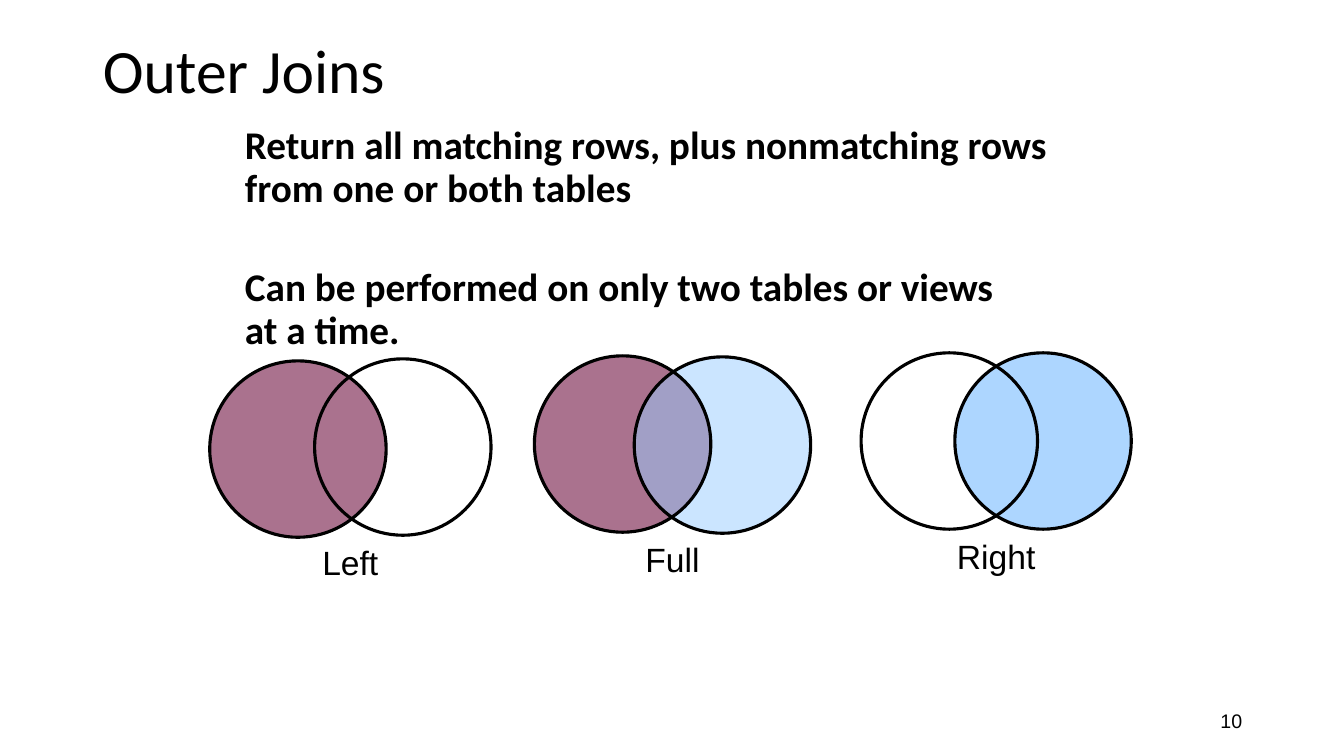
from lxml import etree
from pptx import Presentation
from pptx.dml.color import RGBColor
from pptx.enum.shapes import MSO_SHAPE
from pptx.enum.text import MSO_ANCHOR, MSO_AUTO_SIZE, PP_ALIGN
from pptx.oxml.ns import qn
from pptx.util import Inches, Pt

OVAL = MSO_SHAPE.OVAL
MIDDLE = MSO_ANCHOR.MIDDLE
LEFT, CENTER, RIGHT = PP_ALIGN.LEFT, PP_ALIGN.CENTER, PP_ALIGN.RIGHT
FIT_SHAPE = MSO_AUTO_SIZE.SHAPE_TO_FIT_TEXT

BLACK = RGBColor(0x00, 0x00, 0x00)
PLUM = RGBColor(0x95, 0x4F, 0x72)
SKY = RGBColor(0x99, 0xCC, 0xFF)

TITLE = "Outer Joins"
PAGE_NUMBER = "10"
STATEMENTS = [
    (5, ["Return all matching rows, plus nonmatching rows", "from one or both tables"]),
    (41, ["Can be performed on only two tables or views", "at a time."]),
]
# label, label width, circles from back to front: (left, top, fill, opacity %, outlined)
JOINS = [
    ("Left", 0.56, [(2.08, 3.58, PLUM, 80, False),
                    (3.12, 3.56, None, 0, True),
                    (2.08, 3.58, None, 0, True)]),
    ("Full", 0.54, [(5.3, 3.54, PLUM, 80, False),
                    (6.29, 3.54, SKY, 50, True),
                    (5.3, 3.53, None, 0, True)]),
    ("Right", 0.79, [(9.47, 3.5, SKY, 80, True),
                     (8.54, 3.5, None, 0, True)]),
]
DIAMETER = 1.75
LABEL_DROP = 1.82
LABEL_HEIGHT = 0.4


def add_run(paragraph, text, size, font, bold=False):
    run = paragraph.add_run()
    run.text = text
    run.font.size = Pt(size)
    run.font.name = font
    run.font.bold = bold
    run.font.color.rgb = BLACK


def add_frame(slide, left, top, width, height):
    frame = slide.shapes.add_textbox(
        Inches(left), Inches(top), Inches(width), Inches(height)).text_frame
    frame.word_wrap = True
    return frame


def add_circle(slide, left, top, fill, opacity, outlined):
    circle = slide.shapes.add_shape(
        OVAL, Inches(left), Inches(top), Inches(DIAMETER), Inches(DIAMETER))
    circle.shadow.inherit = False
    if fill is None:
        circle.fill.background()
    else:
        circle.fill.solid()
        circle.fill.fore_color.rgb = fill
        color = circle.fill._xPr.find(qn("a:solidFill"))[0]
        etree.SubElement(color, qn("a:alpha")).set("val", str(opacity * 1000))
    if outlined:
        circle.line.color.rgb = BLACK
        circle.line.width = Pt(2.25)
    else:
        circle.line.fill.background()


def add_join(slide, label, label_width, circles):
    for circle in circles:
        add_circle(slide, *circle)
    lefts = [circle[0] for circle in circles]
    middle = (min(lefts) + max(lefts) + DIAMETER) / 2
    label_top = min(circle[1] for circle in circles) + LABEL_DROP
    frame = add_frame(slide, middle - label_width / 2, label_top, label_width, LABEL_HEIGHT)
    frame.word_wrap = False
    frame.auto_size = FIT_SHAPE
    frame.margin_left = frame.margin_right = frame.margin_top = frame.margin_bottom = 0
    frame.paragraphs[0].alignment = CENTER
    add_run(frame.paragraphs[0], label, 24, "Arial")


def add_title(slide):
    title = slide.shapes.title
    title.left, title.top = Inches(0.92), Inches(0)
    title.width, title.height = Inches(11.5), Inches(1.45)
    title.text_frame.vertical_anchor = MIDDLE
    heading = title.text_frame.paragraphs[0]
    heading.alignment = LEFT
    heading.line_spacing = 0.9
    add_run(heading, TITLE, 44, "Calibri")


def add_statements(slide):
    frame = add_frame(slide, 2.21, 1.2, 8.58, 4.67)
    frame.margin_left = Inches(0.22)
    for index, (gap, lines) in enumerate(STATEMENTS):
        paragraph = frame.add_paragraph() if index else frame.paragraphs[0]
        paragraph.line_spacing = 0.9
        paragraph.space_before = Pt(gap)
        for number, line in enumerate(lines):
            if number:
                paragraph.add_line_break()
            add_run(paragraph, line, 28, "Calibri", True)


def add_page_number(slide):
    frame = add_frame(slide, 9.42, 6.95, 3, 0.4)
    frame.vertical_anchor = MIDDLE
    frame.paragraphs[0].alignment = RIGHT
    add_run(frame.paragraphs[0], PAGE_NUMBER, 14, "Arial")


def main():
    deck = Presentation()
    deck.slide_width, deck.slide_height = Inches(13.33), Inches(7.5)
    slide = deck.slides.add_slide(deck.slide_layouts[5])
    add_title(slide)
    add_statements(slide)
    add_page_number(slide)
    for join in JOINS:
        add_join(slide, *join)
    deck.save("out.pptx")


if __name__ == "__main__":
    main()
